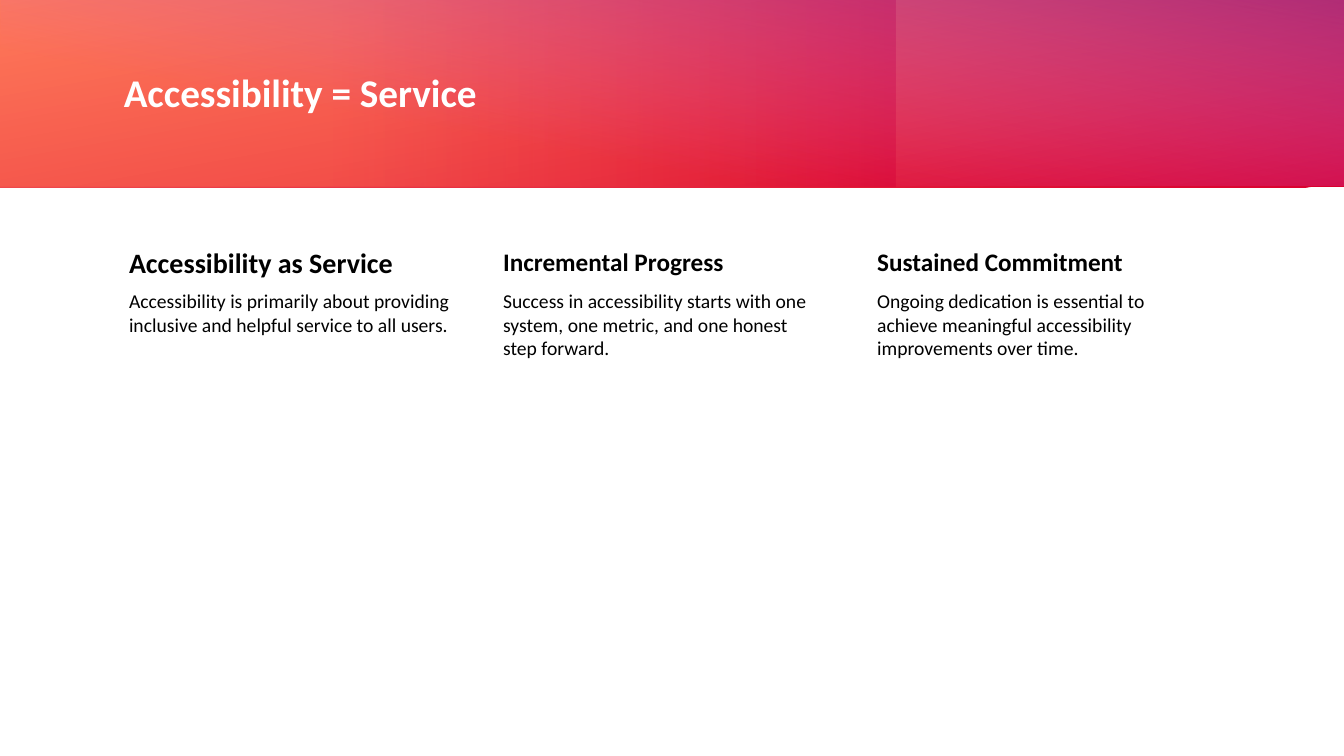
from lxml.etree import SubElement
from pptx import Presentation
from pptx.dml.color import RGBColor
from pptx.enum.shapes import MSO_SHAPE
from pptx.enum.text import MSO_ANCHOR
from pptx.oxml.ns import qn
from pptx.util import Pt

PX = 9144
COLUMN_LEFT, COLUMN_STEP, COLUMN_WIDTH = 113, 371, 337
HEADING_TOP, HEADING_HEIGHT = 241, 44
BODY_HEIGHT = 400

BANDS = [
    ((-1, 0, 1335, 186), 260, [(0, "DA002F", 100), (100, "FF8463", 100)]),
    ((-1, 0, 889, 185), 0, [(37, "FF6C4F", 42), (99, "DA002F", 50)]),
    ((1, -1, 1334, 185), 280, [(32, "D861D4", 0), (100, "93258E", 66)]),
]
COLUMNS = [
    ("Accessibility as Service", 20,
     "Accessibility is primarily about providing inclusive and helpful service to all users."),
    ("Incremental Progress", 18,
     "Success in accessibility starts with one system, one metric, and one honest step forward."),
    ("Sustained Commitment", 18,
     "Ongoing dedication is essential to achieve meaningful accessibility improvements over time."),
]


def color(value):
    return RGBColor.from_string(value)


def apply(target, values):
    for name, value in values.items():
        setattr(target, name, value)


class SlideBuilder:
    font_name = "Calibri"

    def __init__(self, slide):
        self.slide = slide

    def band(self, box, angle, stops):
        shape = self.slide.shapes.add_shape(MSO_SHAPE.RECTANGLE, *(n * PX for n in box))
        shape.shadow.inherit = False
        shape.line.fill.background()
        shape.fill.gradient()
        shape.fill.gradient_angle = (360 - angle) % 360
        for stop, (position, value, _) in zip(shape.fill.gradient_stops, stops):
            stop.position = position / 100
            stop.color.rgb = color(value)
        for element, (_, _, opacity) in zip(shape.element.iter(qn("a:srgbClr")), stops):
            SubElement(element, qn("a:alpha")).set("val", str(opacity * 1000))

    def text(self, box, words, size, ink="000000", bold=False, insets=(10, 5, 10, 5),
             anchor=MSO_ANCHOR.TOP, spacing=1.0):
        shape = self.slide.shapes.add_textbox(*(n * PX for n in box))
        left, top, right, bottom = (n * PX for n in insets)
        apply(shape.text_frame, {
            "word_wrap": True, "vertical_anchor": anchor,
            "margin_left": left, "margin_top": top,
            "margin_right": right, "margin_bottom": bottom,
        })
        paragraph = shape.text_frame.paragraphs[0]
        paragraph.line_spacing = spacing
        run = paragraph.add_run()
        run.text = words
        apply(run.font, {"name": self.font_name, "size": Pt(size), "bold": bold})
        run.font.color.rgb = color(ink)

    def column(self, left, heading, heading_size, body):
        self.text((left, HEADING_TOP, COLUMN_WIDTH, HEADING_HEIGHT), heading,
                  heading_size, bold=True, insets=(15, 3, 3, 3))
        self.text((left, HEADING_TOP + HEADING_HEIGHT, COLUMN_WIDTH, BODY_HEIGHT), body,
                  14, insets=(15, 2, 2, 2))


def main():
    presentation = Presentation()
    apply(presentation, {"slide_width": 1333 * PX, "slide_height": 750 * PX})
    builder = SlideBuilder(presentation.slides.add_slide(presentation.slide_layouts[6]))
    for band in BANDS:
        builder.band(*band)
    builder.text((113, 38, 1080, 113), "Accessibility = Service", 28, "FFFFFF", bold=True,
                 anchor=MSO_ANCHOR.MIDDLE, spacing=0.9)
    for index, column in enumerate(COLUMNS):
        builder.column(COLUMN_LEFT + index * COLUMN_STEP, *column)
    presentation.save("out.pptx")


if __name__ == "__main__":
    main()
